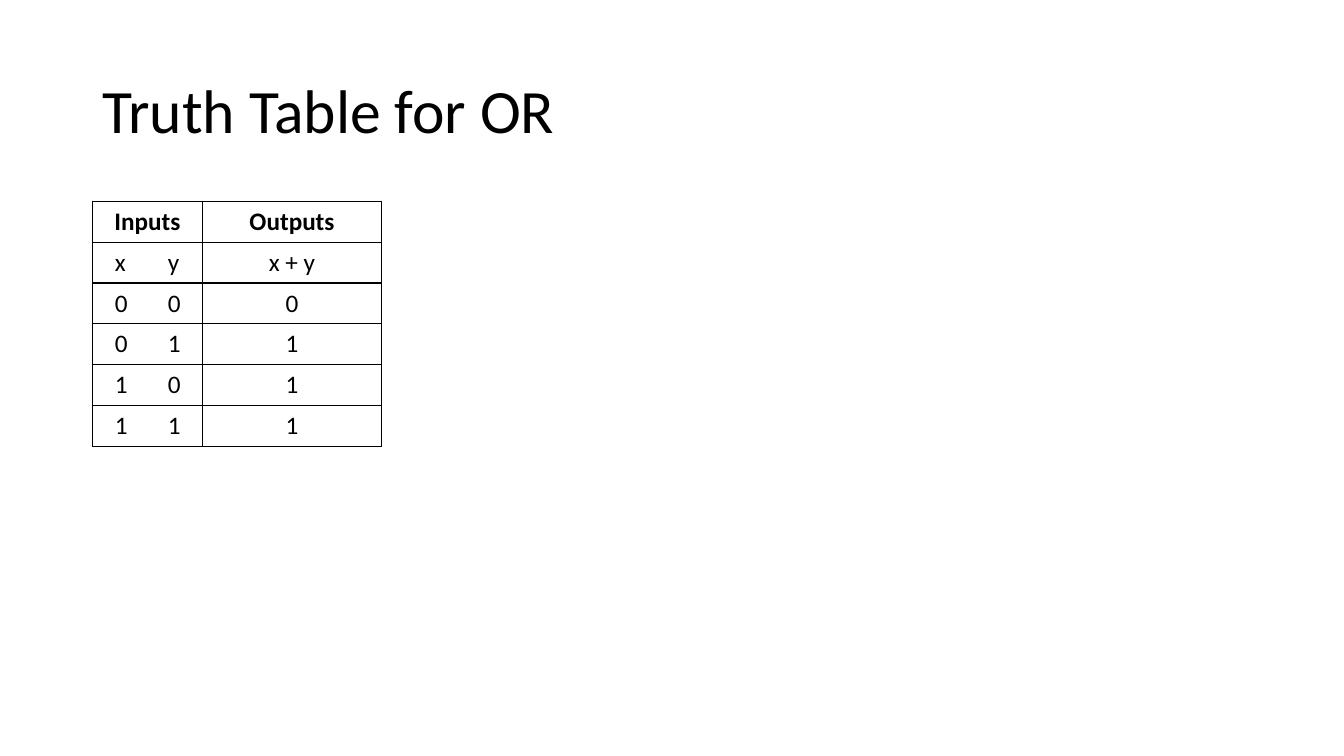
"""Build a slide with the truth table of the OR function."""
import pptx
import pptx.dml.color
import pptx.enum.text
import pptx.oxml
import pptx.oxml.ns
import pptx.util
from lxml import etree

Pt = pptx.util.Pt
ALIGN = pptx.enum.text.PP_ALIGN
ANCHOR = pptx.enum.text.MSO_ANCHOR
COLORS = {"ink": "000000", "paper": "FFFFFF"}
FONT = "Calibri"


def write_text(frame, text, size=18, bold=False, align=ALIGN.LEFT, spacing=1.0):
    paragraph = frame.paragraphs[0]
    paragraph.alignment = align
    paragraph.line_spacing = spacing
    run = paragraph.add_run()
    run.text = text
    run.font.name = FONT
    run.font.size = Pt(size)
    run.font.bold = bold
    run.font.color.rgb = pptx.dml.color.RGBColor.from_string(COLORS["ink"])
    return paragraph


class SlideBuilder:
    def __init__(self, presentation):
        self.slide = presentation.slides.add_slide(presentation.slide_layouts[6])
        fill = self.slide.background.fill
        fill.solid()
        fill.fore_color.rgb = pptx.dml.color.RGBColor.from_string(COLORS["paper"])

    def title(self, text, left, top, width, height):
        shape = self.slide.shapes.add_textbox(Pt(left), Pt(top), Pt(width), Pt(height))
        frame = shape.text_frame
        frame.word_wrap = True
        frame.vertical_anchor = ANCHOR.MIDDLE
        write_text(frame, text, size=44, spacing=0.9)

    def table(self, rows, left, top, widths, row_height):
        shape = self.slide.shapes.add_table(
            len(rows), len(widths), Pt(left), Pt(top),
            Pt(sum(widths)), Pt(row_height * len(rows)))
        table = shape.table
        table.horz_banding = False
        for column, width in zip(table.columns, widths):
            column.width = Pt(width)
        for row_index, values in enumerate(rows):
            table.rows[row_index].height = Pt(row_height)
            for column_index, value in enumerate(values):
                self.cell(table.cell(row_index, column_index), value, row_index == 0)

    def cell(self, cell, value, bold):
        if isinstance(value, tuple):
            cell.margin_left = Pt(16)
            paragraph = write_text(cell.text_frame, "\t".join(value), bold=bold)
            self.tab_stop(paragraph, 38)
        else:
            write_text(cell.text_frame, value, bold=bold, align=ALIGN.CENTER)
        self.borders(cell)
        cell.fill.background()

    def tab_stop(self, paragraph, position):
        qn = pptx.oxml.ns.qn
        tabs = etree.SubElement(paragraph._p.get_or_add_pPr(), qn("a:tabLst"))
        etree.SubElement(tabs, qn("a:tab"), pos=str(Pt(position)), algn="l")

    def borders(self, cell):
        qn = pptx.oxml.ns.qn
        properties = cell._tc.get_or_add_tcPr()
        for side in ("a:lnL", "a:lnR", "a:lnT", "a:lnB"):
            line = etree.SubElement(properties, qn(side), w=str(Pt(1)))
            fill = etree.SubElement(line, qn("a:solidFill"))
            etree.SubElement(fill, qn("a:srgbClr"), val=COLORS["ink"])


def main():
    presentation = pptx.Presentation()
    presentation.slide_width = Pt(960)
    presentation.slide_height = Pt(540)
    builder = SlideBuilder(presentation)
    builder.title("Truth Table for OR", 66, 28.75, 828, 104.4)
    rows = [("Inputs", "Outputs"), (("x", "y"), "x + y")]
    rows += [((str(x), str(y)), str(x | y)) for x in (0, 1) for y in (0, 1)]
    builder.table(rows, left=66, top=143.75, widths=(78.75, 127.75), row_height=29.2)
    presentation.save("out.pptx")


if __name__ == "__main__":
    main()
